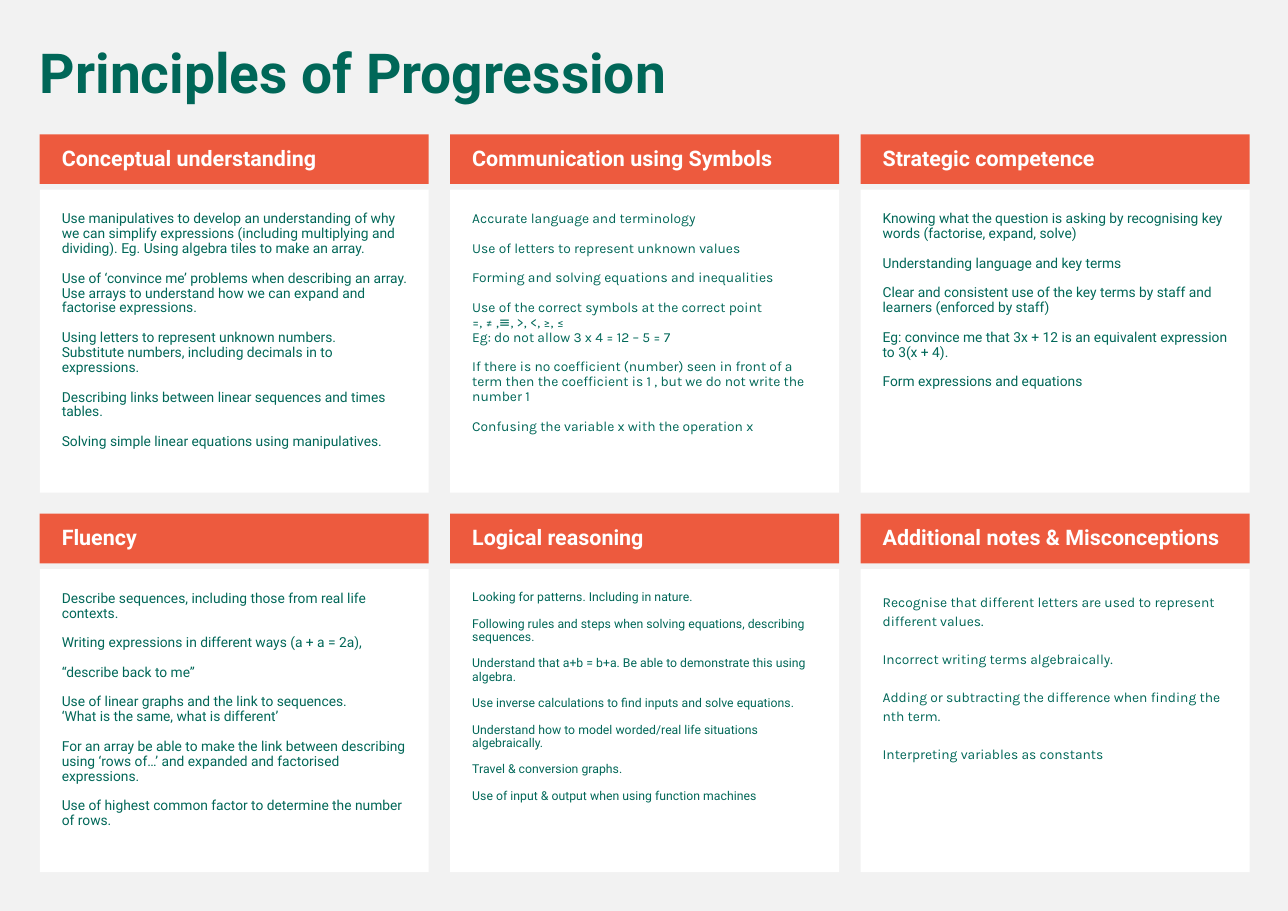
"""Build the Principles of Progression page with six headed panels."""
import lxml.etree
import pptx
import pptx.dml.color
import pptx.enum.shapes
import pptx.enum.text
import pptx.oxml.ns
import pptx.util

Pt = pptx.util.Pt
RGBColor = pptx.dml.color.RGBColor
Anchor = pptx.enum.text.MSO_ANCHOR

GREEN = RGBColor(0x00, 0x67, 0x58)
ORANGE = RGBColor(0xED, 0x5A, 0x3E)
WHITE = RGBColor(0xFF, 0xFF, 0xFF)
GREY = RGBColor(0xF2, 0xF2, 0xF2)

LEFT, TOP = 26, 87.8
COLUMN_STEP, ROW_STEP = 268.2, 248
PANEL_WIDTH, HEADING_HEIGHT = 254.2, 32.4
NOTES_OFFSET, NOTES_HEIGHT = 36.2, 198

ROBOTO = {"font": "Roboto", "size": 9, "leading": 0.9, "gap": 9.6}
KARLA = {**ROBOTO, "font": "Karla"}
SMALL = {**ROBOTO, "size": 8, "gap": 8.7}
LOOSE = {**KARLA, "leading": 1.15, "gap": 12.4}

PANELS = [
    ("Conceptual understanding", ROBOTO, [
        "Use manipulatives to develop an understanding of why we can simplify expressions "
        "(including multiplying and dividing). Eg. Using algebra tiles to make an array.",
        "Use of ‘convince me’ problems when describing an array.\n"
        "Use arrays to understand how we can expand and factorise expressions.",
        "Using letters to represent unknown numbers.\n"
        "Substitute numbers, including decimals in to expressions.",
        "Describing links between linear sequences and times tables.",
        "Solving simple linear equations using manipulatives.",
    ]),
    ("Communication using Symbols", KARLA, [
        "Accurate language and terminology",
        "Use of letters to represent unknown values",
        "Forming and solving equations and inequalities",
        "Use of the correct symbols at the correct point\n"
        "=, ≠ ,≡, >, <, ≥, ≤\n"
        "Eg: do not allow 3 x 4 = 12 – 5 = 7",
        "If there is no coefficient (number) seen in front of a term then the coefficient "
        "is 1 , but we do not write the number 1",
        "Confusing the variable x with the operation x",
    ]),
    ("Strategic competence", ROBOTO, [
        "Knowing what the question is asking by recognising key words "
        "(factorise, expand, solve)",
        "Understanding language and key terms",
        "Clear and consistent use of the key terms by staff and learners (enforced by staff)",
        "Eg: convince me that 3x + 12 is an equivalent expression to 3(x + 4).",
        "Form expressions and equations",
    ]),
    ("Fluency", ROBOTO, [
        "Describe sequences, including those from real life contexts.",
        "Writing expressions in different ways (a + a = 2a),",
        "“describe back to me”",
        "Use of linear graphs and the link to sequences.\n"
        "‘What is the same, what is different’",
        "For an array be able to make the link between describing using ‘rows of…’ "
        "and expanded and factorised expressions.",
        "Use of highest common factor to determine the number of rows.",
    ]),
    ("Logical reasoning", SMALL, [
        "Looking for patterns. Including in nature.",
        "Following rules and steps when solving equations, describing sequences.",
        "Understand that a+b = b+a. Be able to demonstrate this using algebra.",
        "Use inverse calculations to find inputs and solve equations.",
        "Understand how to model worded/real life situations algebraically.",
        "Travel & conversion graphs.",
        "Use of input & output when using function machines",
    ]),
    ("Additional notes & Misconceptions", LOOSE, [
        "Recognise that different letters are used to represent different values.",
        "Incorrect writing terms algebraically.",
        "Adding or subtracting the difference when finding the nth term.",
        "Interpreting variables as constants",
    ]),
]


class ProgressionPage:
    """Hold the current slide and draw its title, headings and notes."""

    def __init__(self, deck):
        layout = deck.slide_layouts[1]
        self.page = deck.slides.add_slide(layout)
        self.page.background.fill.solid()
        self.page.background.fill.fore_color.rgb = GREY
        for _ in PANELS[1:]:
            self.page.shapes.clone_placeholder(layout.placeholders[1])
        self.note_boxes = list(self.page.placeholders)[1:]

    def place(self, box, left, top, width, height):
        box.left, box.top = Pt(left), Pt(top)
        box.width, box.height = Pt(width), Pt(height)

    def fill(self, box, color):
        box.fill.solid()
        box.fill.fore_color.rgb = color

    def frame(self, box, anchor, insets):
        frame = box.text_frame
        frame.word_wrap = True
        frame.auto_size = pptx.enum.text.MSO_AUTO_SIZE.NONE
        frame.vertical_anchor = anchor
        (frame.margin_left, frame.margin_top,
         frame.margin_right, frame.margin_bottom) = map(Pt, insets)
        return frame

    def add_text(self, para, text, font, size, color, bold=False, leading=0.9, before=0):
        para.alignment = pptx.enum.text.PP_ALIGN.LEFT
        para.line_spacing = leading
        para.space_before = Pt(before)
        para.space_after = Pt(0)
        span = para.add_run()
        span.text = text
        span.font.name, span.font.size, span.font.bold = font, Pt(size), bold
        span.font.color.rgb = color

    def title(self, text):
        box = self.page.shapes.title
        self.place(box, 18.8, 26, 797.8, 46.8)
        frame = self.frame(box, Anchor.MIDDLE, (7.2, 3.6, 7.2, 3.6))
        self.add_text(frame.paragraphs[0], text, "Roboto", 36, GREEN, bold=True)

    def heading(self, text, left, top):
        box = self.page.shapes.add_shape(
            pptx.enum.shapes.MSO_SHAPE.RECTANGLE,
            Pt(left), Pt(top), Pt(PANEL_WIDTH), Pt(HEADING_HEIGHT))
        box.shadow.inherit = False
        box.line.fill.background()
        self.fill(box, ORANGE)
        frame = self.frame(box, Anchor.MIDDLE, (14.4, 3.6, 7.2, 3.6))
        self.add_text(frame.paragraphs[0], text, "Roboto", 14, WHITE, bold=True)

    def notes(self, box, groups, style, left, top):
        self.place(box, left, top, PANEL_WIDTH, NOTES_HEIGHT)
        self.fill(box, WHITE)
        frame = self.frame(box, Anchor.TOP, (14.4,) * 4)
        para = frame.paragraphs[0]
        for group_index, group in enumerate(groups):
            for line_index, line in enumerate(group.split("\n")):
                if group_index or line_index:
                    para = frame.add_paragraph()
                starts_group = group_index > 0 and line_index == 0
                self.add_text(para, line, style["font"], style["size"], GREEN,
                              leading=style["leading"],
                              before=style["gap"] if starts_group else 0)
                self.remove_bullet(para)

    def remove_bullet(self, para):
        properties = para._p.get_or_add_pPr()
        properties.set("marL", "0")
        properties.set("indent", "0")
        lxml.etree.SubElement(properties, pptx.oxml.ns.qn("a:buNone"))


def main():
    deck = pptx.Presentation()
    deck.slide_width, deck.slide_height = Pt(841.68), Pt(595.44)
    progression = ProgressionPage(deck)
    progression.title("Principles of Progression")
    for index, (heading, style, groups) in enumerate(PANELS):
        row, column = divmod(index, 3)
        left = LEFT + column * COLUMN_STEP
        top = TOP + row * ROW_STEP
        progression.heading(heading, left, top)
        progression.notes(progression.note_boxes[index], groups, style,
                          left, top + NOTES_OFFSET)
    deck.save("out.pptx")


if __name__ == "__main__":
    main()
